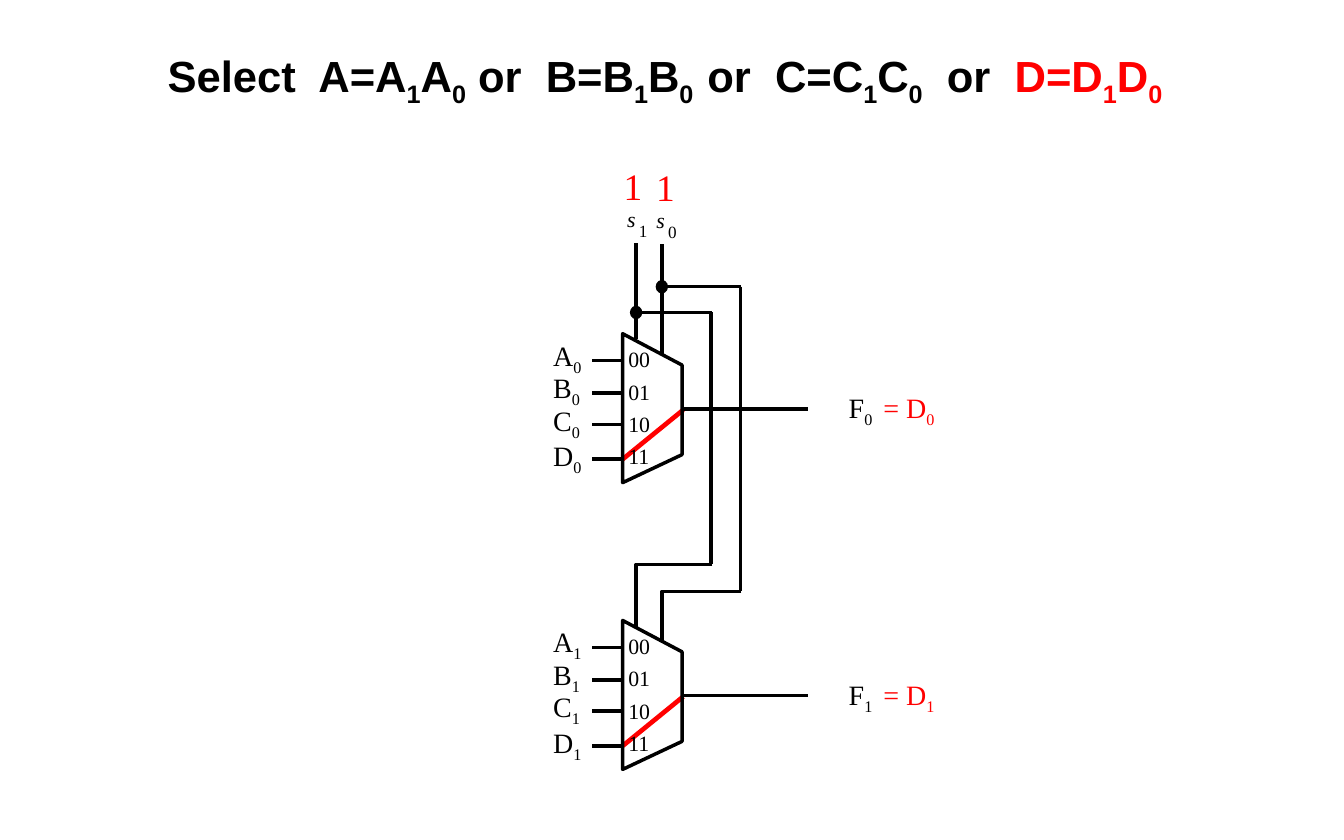
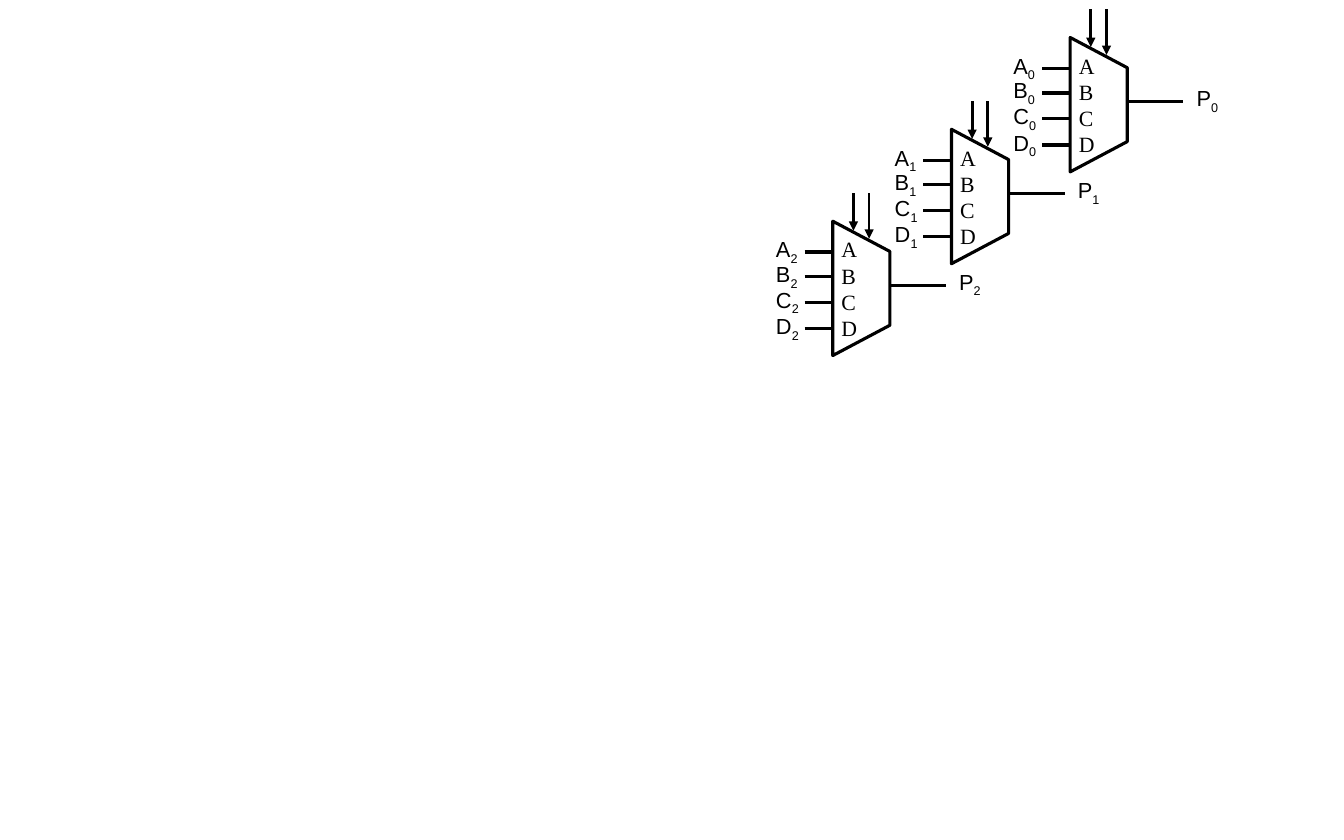
from dataclasses import dataclass
from typing import Any

from lxml.etree import SubElement
from pptx import Presentation
from pptx.dml.color import RGBColor
from pptx.enum.shapes import MSO_CONNECTOR as Connector, MSO_SHAPE as Preset
from pptx.enum.text import MSO_ANCHOR as Anchor, MSO_AUTO_SIZE as AutoSize, PP_ALIGN as Align
from pptx.oxml.ns import qn
from pptx.util import Inches, Pt

COLUMNS, ROWS = 120, 75
SLIDE_WIDTH, SLIDE_HEIGHT = Inches(12), Inches(7.5)
BLACK, RED, WHITE = "000000", "FF0000", "FFFFFF"
SERIF, SANS = "Times New Roman", "Arial"
INPUTS = "ABCD"
CODES = ["00", "01", "10", "11"]


def color(code):
    return RGBColor.from_string(code)


def across(columns):
    return round(SLIDE_WIDTH * columns / COLUMNS)


def down(rows):
    return round(SLIDE_HEIGHT * rows / ROWS)


def add_runs(para, text, size, font=SERIF, tint=BLACK, bold=False, italic=False):
    """Pieces between bars alternate between normal text and subscript."""
    for index, piece in enumerate(text.split("|")):
        if not piece:
            continue
        span = para.add_run()
        span.text = piece
        span.font.size = Pt(size)
        span.font.name = font
        span.font.bold = bold
        span.font.italic = italic
        span.font.color.rgb = color(tint)
        if index % 2:
            span._r.get_or_add_rPr().set("baseline", "-25000")


def paint(shape, width, fill=None):
    shape.shadow.inherit = False
    if fill:
        shape.fill.solid()
        shape.fill.fore_color.rgb = color(fill)
    else:
        shape.fill.background()
    shape.line.color.rgb = color(BLACK)
    shape.line.width = Pt(width)


@dataclass
class Region:
    shapes: Any
    left: float = 0
    top: float = 0

    def place(self, column, row):
        return across(self.left + column), down(self.top + row)

    def wire(self, start, end, width=2.25, tint=BLACK, arrow=False):
        line = self.shapes.add_connector(
            Connector.STRAIGHT, *self.place(*start), *self.place(*end))
        line.line.color.rgb = color(tint)
        line.line.width = Pt(width)
        if arrow:
            SubElement(line.line._get_or_add_ln(), qn("a:tailEnd"), type="triangle")
        SubElement(line._element.spPr, qn("a:effectLst"))

    def outline(self, points, close):
        first, *others = [self.place(*point) for point in points]
        builder = self.shapes.build_freeform(*first)
        builder.add_line_segments(others, close=close)
        paint(builder.convert_to_shape(), 2.25)

    def preset(self, kind, column, row, width, height, line, fill):
        shape = self.shapes.add_shape(
            kind, *self.place(column, row), across(width), down(height))
        paint(shape, line, fill)
        return shape

    def label(self, lines, column, row, width, height, size,
              inset=True, wrap=False, after=0, **style):
        box = self.shapes.add_textbox(
            *self.place(column, row), across(width), down(height))
        frame = box.text_frame
        frame.word_wrap = wrap
        frame.auto_size = AutoSize.NONE if wrap else AutoSize.SHAPE_TO_FIT_TEXT
        if not inset:
            frame.margin_left = frame.margin_right = 0
            frame.margin_top = frame.margin_bottom = 0
        for index, text in enumerate(lines):
            para = frame.paragraphs[0] if index == 0 else frame.add_paragraph()
            para.space_after = Pt(after)
            add_runs(para, text, size, **style)


def add_title(page):
    title = page.shapes.title
    title.left, title.top = 0, down(3.3)
    title.width, title.height = SLIDE_WIDTH, down(7.5)
    frame = title.text_frame
    frame.auto_size = AutoSize.NONE
    frame.vertical_anchor = Anchor.MIDDLE
    para = frame.paragraphs[0]
    para.alignment = Align.CENTER
    add_runs(para, "Select  A=A|1|A|0| or  B=B|1|B|0  |or  C=C|1|C|0|  or  ",
             28, SANS, bold=True)
    add_runs(para, "D=D|1|D|0  ", 28, SANS, RED, bold=True)


def add_selected_mux(region, bit):
    region.wire((0, 11.2), (5.4, 6.8), 3, RED)
    region.outline([(5.3, 10.8), (5.3, 2.8), (0, 0), (0, 13.3)], True)
    region.label(CODES, 0.5, 1.1, 2.4, 11.1, 14, inset=False, after=4)
    wire_rows = [2.4, 5.3, 8.1, 11.2]
    label_rows = [-0.1, 2.8, 5.7, 8.9]
    for name, wire_row, label_row in zip(INPUTS, wire_rows, label_rows):
        region.wire((-2.7, wire_row), (0, wire_row))
        region.label([f"{name}|{bit}"], -7.2, label_row, 4.6, 4, 18)
    region.wire((16.5, 6.7), (5.3, 6.7))
    region.label([f"F|{bit}"], 19.2, 4.6, 4.3, 4, 18)
    region.label([f"= D|{bit}"], 22.3, 4.6, 6.7, 4, 18, tint=RED)


def add_select_line(region, bit, value_column, name_column, branch, side, turn, ends):
    upper_end, lower_end = ends
    region.label(["1"], value_column, -7.6, 3.7, 5.1, 24, tint=RED)
    region.label(["s"], name_column, -3.35, 1.3, 2.4, 14, inset=False, italic=True)
    region.label([bit], name_column + 1.05, -2, 1.2, 1.9, 11, inset=False)
    region.wire((0, 0), (0, upper_end))
    region.wire((0, branch), (side + 0.1, branch))
    region.wire((side, branch), (side, turn))
    region.outline([(side + 0.1, turn), (0, turn), (0, lower_end)], False)
    region.preset(Preset.OVAL, -0.5, branch - 0.55, 1, 1.1, 0.75, BLACK)


def add_selection_slide(deck):
    page = deck.slides.add_slide(deck.slide_layouts[5])
    add_title(page)
    shapes = page.shapes.add_group_shape().shapes
    for bit in range(2):
        add_selected_mux(Region(shapes, 55.6, 29.8 + 25.6 * bit), bit)
    add_select_line(Region(shapes, 56.8, 21.7), "1",
                    -2.1, -0.8, 6.2, 6.7, 28.7, (8.6, 34.4))
    add_select_line(Region(shapes, 59.1, 21.8), "0",
                    -1.5, -0.5, 3.8, 7, 31, (9.8, 35.4))


def add_stacked_mux(region, bit):
    width, height = 5.1, 12
    shift = (height - width) / 2
    body = region.preset(Preset.TRAPEZOID, -shift, shift, height, width, 2, WHITE)
    body.rotation = 90
    body.adjustments[0] = 0.53
    region.wire((width, 5.75), (10.1, 5.75), 2)
    for column, end in [(1.85, 0.85), (3.25, 1.55)]:
        region.wire((column, -2.5), (column, end), 1.75, arrow=True)
    region.label(INPUTS, -0.2, 0.85, 4.8, 11, 14, wrap=True)
    region.label([f"P|{bit}"], 10.3, 3.75, 4.1, 3.4, 14, font=SANS)
    for name, row in zip(INPUTS, [2.75, 4.95, 7.25, 9.6]):
        region.wire((-2.5, row), (0, row), 2)
        region.label([f"{name}|{bit}"], -6.05, row - 1.9, 4.1, 3.4, 14, font=SANS)


def add_stack_slide(deck):
    page = deck.slides.add_slide(deck.slide_layouts[6])
    for bit in range(3):
        shapes = page.shapes.add_group_shape().shapes
        add_stacked_mux(Region(shapes, 95.55 - 10.6 * bit, 3.35 + 8.2 * bit), bit)


def main():
    deck = Presentation()
    deck.slide_width, deck.slide_height = SLIDE_WIDTH, SLIDE_HEIGHT
    add_selection_slide(deck)
    add_stack_slide(deck)
    deck.save("out.pptx")


if __name__ == "__main__":
    main()
